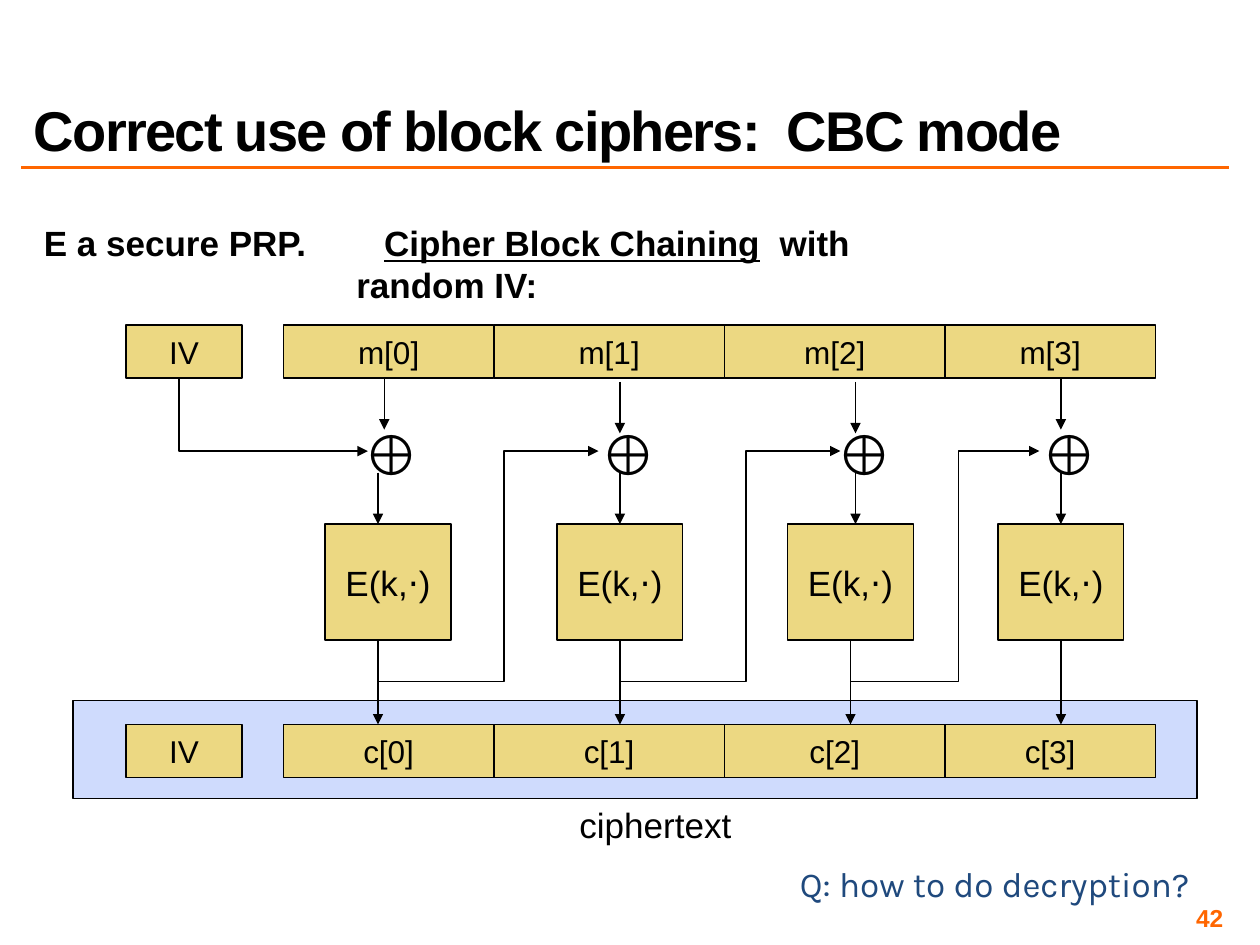
from dataclasses import dataclass

import lxml.etree
import pptx
import pptx.dml.color
import pptx.enum.shapes
import pptx.enum.text
import pptx.oxml.ns
import pptx.util

Inches = pptx.util.Inches
Pt = pptx.util.Pt
RGBColor = pptx.dml.color.RGBColor
Align = pptx.enum.text.PP_ALIGN
Anchor = pptx.enum.text.MSO_ANCHOR
qn = pptx.oxml.ns.qn

BLACK = RGBColor(0x00, 0x00, 0x00)
ORANGE = RGBColor(0xFF, 0x66, 0x00)
GOLD = RGBColor(0xEC, 0xD8, 0x82)
PALE_BLUE = RGBColor(0xCF, 0xDB, 0xFD)
NAVY = RGBColor(0x1F, 0x49, 0x7D)

MESSAGE_TOP = 2.58
XOR_TOP = 3.28
CHAIN_Y = 3.58
XOR_BOTTOM = 3.75
CIPHER_TOP = 4.16
CIPHER_HEIGHT = 0.92
FEEDBACK_Y = 5.41
OUTPUT_TOP = 5.75
BLOCK_HEIGHT = 0.42


@dataclass(frozen=True)
class Lane:
    left: float
    width: float
    cipher_left: float
    xor_left: float
    input_x: float
    input_y: float
    xor_x: float
    output_x: float


@dataclass(frozen=True)
class Feedback:
    start_x: float
    bend_x: float
    end_x: float


LANES = [
    Lane(2.25, 1.67, 2.58, 2.79, 3.05, 3.00, 3.00, 3.00),
    Lane(3.92, 1.83, 4.42, 4.67, 4.92, 3.03, 4.92, 4.92),
    Lane(5.75, 1.75, 6.25, 6.54, 6.79, 3.03, 6.79, 6.75),
    Lane(7.50, 1.67, 7.92, 8.17, 8.42, 3.00, 8.42, 8.42),
]
FEEDBACKS = [
    Feedback(3.00, 4.00, 4.75),
    Feedback(4.92, 5.92, 6.67),
    Feedback(6.75, 7.61, 8.25),
]


def add_run(paragraph, text: str, size: float, color: RGBColor = BLACK,
            bold: bool = False, underline: bool = False, font: str = "Arial"):
    run = paragraph.add_run()
    run.text = text
    run.font.name = font
    run.font.size = Pt(size)
    run.font.bold = bold
    run.font.underline = underline
    run.font.color.rgb = color
    return run


def add_text_box(slide, left: float, top: float, width: float, height: float, wrap: bool = False):
    frame = slide.shapes.add_textbox(
        Inches(left), Inches(top), Inches(width), Inches(height)).text_frame
    frame.word_wrap = wrap
    return frame


def add_block(slide, left: float, top: float, width: float, height: float,
              text: str = "", size: float = 18, fill: RGBColor = GOLD) -> None:
    shape = slide.shapes.add_shape(
        pptx.enum.shapes.MSO_SHAPE.RECTANGLE,
        Inches(left), Inches(top), Inches(width), Inches(height))
    shape.shadow.inherit = False
    shape.fill.solid()
    shape.fill.fore_color.rgb = fill
    shape.line.color.rgb = BLACK
    shape.line.width = Pt(0.75)
    if text:
        frame = shape.text_frame
        frame.word_wrap = False
        frame.vertical_anchor = Anchor.MIDDLE
        frame.paragraphs[0].alignment = Align.CENTER
        add_run(frame.paragraphs[0], text, size)


def add_arrowhead(line) -> None:
    lxml.etree.SubElement(line._get_or_add_ln(), qn("a:tailEnd"), type="triangle")


def add_line(slide, start: tuple[float, float], end: tuple[float, float],
             color: RGBColor = BLACK, width: float = 0.75, arrow: bool = True) -> None:
    connector = slide.shapes.add_connector(
        pptx.enum.shapes.MSO_CONNECTOR.STRAIGHT,
        Inches(start[0]), Inches(start[1]), Inches(end[0]), Inches(end[1]))
    connector.line.color.rgb = color
    connector.line.width = Pt(width)
    if arrow:
        add_arrowhead(connector.line)
    lxml.etree.SubElement(connector._element.spPr, qn("a:effectLst"))


def add_elbow(slide, points: list[tuple[float, float]], width: float = 0.75) -> None:
    corners = [(Inches(x), Inches(y)) for x, y in points]
    builder = slide.shapes.build_freeform(*corners[0])
    builder.add_line_segments(corners[1:], close=False)
    shape = builder.convert_to_shape()
    shape.shadow.inherit = False
    shape.fill.background()
    shape.line.color.rgb = BLACK
    shape.line.width = Pt(width)
    add_arrowhead(shape.line)


def add_headings(slide) -> None:
    add_line(slide, (0.17, 1.33), (9.75, 1.33), ORANGE, 2, arrow=False)
    title = add_text_box(slide, 0.17, 0.17, 8.75, 1.17, wrap=True)
    title.vertical_anchor = Anchor.BOTTOM
    title.paragraphs[0].line_spacing = 0.8
    run = add_run(title.paragraphs[0], "Correct use of block ciphers:  CBC mode", 32, bold=True)
    run.font._element.set("spc", "-100")

    assumption = add_text_box(slide, 0.25, 1.71, 2.4, 0.44)
    add_run(assumption.paragraphs[0], "E a secure PRP.", 20, bold=True)
    mode = add_text_box(slide, 2.73, 1.71, 4.3, 0.75, wrap=True).paragraphs[0]
    mode._p.get_or_add_pPr().set("indent", str(Inches(0.22)))
    add_run(mode, "Cipher Block Chaining", 20, bold=True, underline=True)
    add_run(mode, "  with random IV:", 20, bold=True)


def add_diagram(slide) -> None:
    add_block(slide, 0.58, 5.56, 8.92, 0.78, fill=PALE_BLUE)
    for top, letter in ((MESSAGE_TOP, "m"), (OUTPUT_TOP, "c")):
        add_block(slide, 1, top, 0.92, BLOCK_HEIGHT, "IV")
        for index, lane in enumerate(LANES):
            add_block(slide, lane.left, top, lane.width, BLOCK_HEIGHT, f"{letter}[{index}]")

    for lane in LANES:
        add_block(slide, lane.cipher_left, CIPHER_TOP, 1, CIPHER_HEIGHT, "E(k,⋅)", 20)
        xor = add_text_box(slide, lane.xor_left, XOR_TOP, 0.54, 0.63)
        add_run(xor.paragraphs[0], "⊕", 32)
        add_line(slide, (lane.input_x, lane.input_y), (lane.input_x, lane.input_y + 0.41))
        add_line(slide, (lane.xor_x, XOR_BOTTOM), (lane.xor_x, CIPHER_TOP))
        add_line(slide, (lane.output_x, CIPHER_TOP + CIPHER_HEIGHT), (lane.output_x, OUTPUT_TOP))

    add_elbow(slide, [(1.42, 3), (1.42, CHAIN_Y), (2.92, CHAIN_Y)], 1)
    for feedback in FEEDBACKS:
        add_elbow(slide, [
            (feedback.start_x, FEEDBACK_Y), (feedback.bend_x, FEEDBACK_Y),
            (feedback.bend_x, CHAIN_Y), (feedback.end_x, CHAIN_Y)])


def add_captions(slide) -> None:
    caption = add_text_box(slide, 4.5, 6.33, 1.42, 0.44)
    add_run(caption.paragraphs[0], "ciphertext", 20)
    question = add_text_box(slide, 6.25, 6.8, 3.44, 0.44)
    add_run(question.paragraphs[0], "Q: how to do decryption?", 20, NAVY, font="Karla")
    number = add_text_box(slide, 7.42, 7.17, 2.33, 0.23, wrap=True)
    number.vertical_anchor = Anchor.MIDDLE
    number.margin_left = number.margin_right = Inches(0.04)
    number.margin_top = number.margin_bottom = Inches(0.04)
    number.paragraphs[0].alignment = Align.RIGHT
    add_run(number.paragraphs[0], "42", 14, ORANGE, bold=True)


def main() -> None:
    presentation = pptx.Presentation()
    presentation.slide_width = Inches(10)
    presentation.slide_height = Inches(7.5)
    slide = presentation.slides.add_slide(presentation.slide_layouts[6])
    add_headings(slide)
    add_diagram(slide)
    add_captions(slide)
    presentation.save("out.pptx")


if __name__ == "__main__":
    main()
